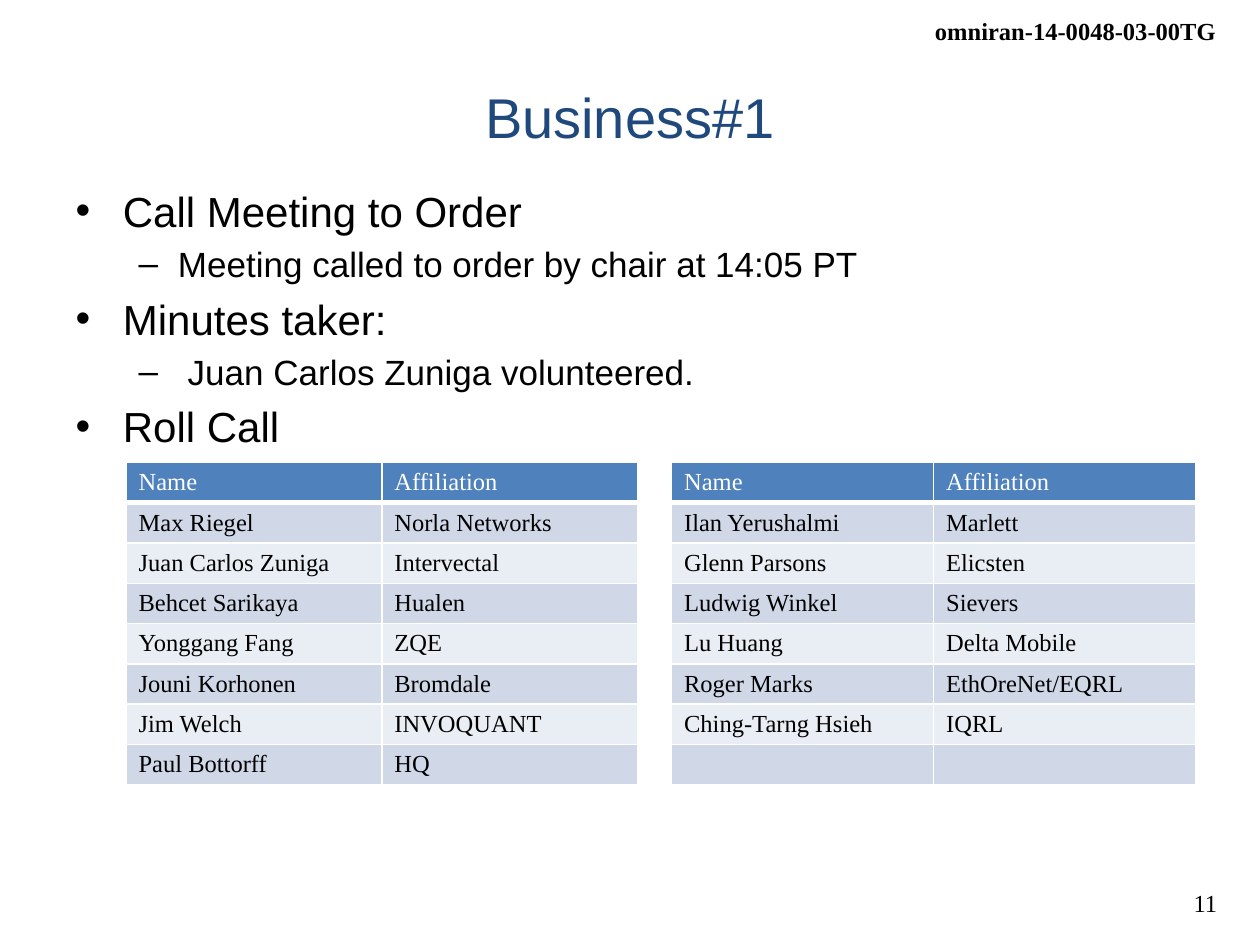
from dataclasses import dataclass

from lxml import etree
from pptx import Presentation
from pptx import util as u
from pptx.dml.color import RGBColor
from pptx.enum import text
from pptx.oxml import ns

COLORS = {
    "black": "000000",
    "white": "FFFFFF",
    "title": "1F497D",
    "header": "4F81BD",
    "odd_row": "D0D8E8",
    "even_row": "E9EDF4",
}
SANS, SERIF = "Arial", "Times New Roman"
GAP_COLUMN = 2
COLUMN_WIDTHS = [2.03, 2.03, 0.27, 2.08, 2.08]
ROW_HEIGHT = 0.32


@dataclass
class MarginNote:
    words: str
    left: float
    top: float
    width: float
    bold: bool = False


@dataclass
class AgendaItem:
    words: str
    level: int = 0


NOTES = [
    MarginNote("omniran-14-0048-03-00TG", 7.3, 0.08, 2.45, True),
    MarginNote("11", 9.33, 7, 0.43),
]
AGENDA = [
    AgendaItem("Call Meeting to Order"),
    AgendaItem("Meeting called to order by chair at 14:05 PT", 1),
    AgendaItem("Minutes taker:"),
    AgendaItem(" Juan Carlos Zuniga volunteered.", 1),
    AgendaItem("Roll Call"),
]
ROLL_CALL = [
    ["Name", "Affiliation", "", "Name", "Affiliation"],
    ["Max Riegel", "Norla Networks", "", "Ilan Yerushalmi", "Marlett"],
    ["Juan Carlos Zuniga", "Intervectal", "", "Glenn Parsons", "Elicsten"],
    ["Behcet Sarikaya", "Hualen", "", "Ludwig Winkel", "Sievers"],
    ["Yonggang Fang", "ZQE", "", "Lu Huang", "Delta Mobile"],
    ["Jouni Korhonen", "Bromdale", "", "Roger Marks", "EthOreNet/EQRL"],
    ["Jim Welch", "INVOQUANT", "", "Ching-Tarng Hsieh", "IQRL"],
    ["Paul Bottorff", "HQ", "", "", ""],
]


def rgb(name: str) -> RGBColor:
    return RGBColor.from_string(COLORS[name])


def add_run(paragraph, words: str, size: float, font: str, color: str, bold: bool = False) -> None:
    run = paragraph.add_run()
    run.text = words
    run.font.size = u.Pt(size)
    run.font.name = font
    run.font.bold = bold
    run.font.color.rgb = rgb(color)


def place(shape, left: float, top: float, width: float, height: float) -> None:
    shape.left, shape.top = u.Inches(left), u.Inches(top)
    shape.width, shape.height = u.Inches(width), u.Inches(height)


def add_note(slide, note: MarginNote) -> None:
    box = slide.shapes.add_textbox(
        u.Inches(note.left), u.Inches(note.top), u.Inches(note.width), u.Inches(0.34)
    )
    box.text_frame.word_wrap = False
    box.text_frame.auto_size = text.MSO_AUTO_SIZE.SHAPE_TO_FIT_TEXT
    paragraph = box.text_frame.paragraphs[0]
    paragraph.alignment = text.PP_ALIGN.RIGHT
    add_run(paragraph, note.words, 14, SERIF, "black", note.bold)


def fill_title(title) -> None:
    place(title, 0.5, 0.3, 9, 1.25)
    title.text_frame.vertical_anchor = text.MSO_ANCHOR.MIDDLE
    paragraph = title.text_frame.paragraphs[0]
    paragraph.alignment = text.PP_ALIGN.CENTER
    add_run(paragraph, "Business#1", 32, SANS, "title")


def fill_agenda(body) -> None:
    place(body, 0.5, 1.42, 9, 2.83)
    frame = body.text_frame
    for index, item in enumerate(AGENDA):
        paragraph = frame.add_paragraph() if index else frame.paragraphs[0]
        paragraph.level = item.level
        add_run(paragraph, item.words, 20 if item.level else 24, SANS, "black")


def set_borders(cell, bottom_width: float) -> None:
    properties = cell._tc.get_or_add_tcPr()
    for side, width in {"L": 1, "R": 1, "T": 1, "B": bottom_width}.items():
        line = etree.SubElement(properties, ns.qn(f"a:ln{side}"), w=str(u.Pt(width)))
        fill = etree.SubElement(line, ns.qn("a:solidFill"))
        etree.SubElement(fill, ns.qn("a:srgbClr"), val=COLORS["white"])


def cell_fill(row: int, column: int) -> str:
    if column == GAP_COLUMN:
        return "white"
    if row == 0:
        return "header"
    return "odd_row" if row % 2 else "even_row"


def fill_cell(cell, words: str, row: int, column: int) -> None:
    set_borders(cell, 1 if row else 3)
    cell.fill.solid()
    cell.fill.fore_color.rgb = rgb(cell_fill(row, column))
    cell.margin_top = cell.margin_bottom = u.Inches(0.04)
    cell.vertical_anchor = text.MSO_ANCHOR.MIDDLE
    paragraph = cell.text_frame.paragraphs[0]
    if words:
        add_run(paragraph, words, 14, SERIF, "black" if row else "white")
    else:
        etree.SubElement(paragraph._p, ns.qn("a:endParaRPr"), sz="1400")


def add_roll_call(slide) -> None:
    rows, columns = len(ROLL_CALL), len(COLUMN_WIDTHS)
    table = slide.shapes.add_table(
        rows, columns, u.Inches(1), u.Inches(3.67),
        u.Inches(sum(COLUMN_WIDTHS)), u.Inches(rows * ROW_HEIGHT),
    ).table
    for column, width in zip(table.columns, COLUMN_WIDTHS):
        column.width = u.Inches(width)
    for row, entries in enumerate(ROLL_CALL):
        table.rows[row].height = u.Inches(ROW_HEIGHT)
        for column, words in enumerate(entries):
            fill_cell(table.cell(row, column), words, row, column)


def main() -> None:
    presentation = Presentation()
    presentation.slide_width, presentation.slide_height = u.Inches(10), u.Inches(7.5)
    slide = presentation.slides.add_slide(presentation.slide_layouts[1])
    for note in NOTES:
        add_note(slide, note)
    fill_title(slide.shapes.title)
    fill_agenda(slide.placeholders[1])
    add_roll_call(slide)
    presentation.save("out.pptx")


if __name__ == "__main__":
    main()
